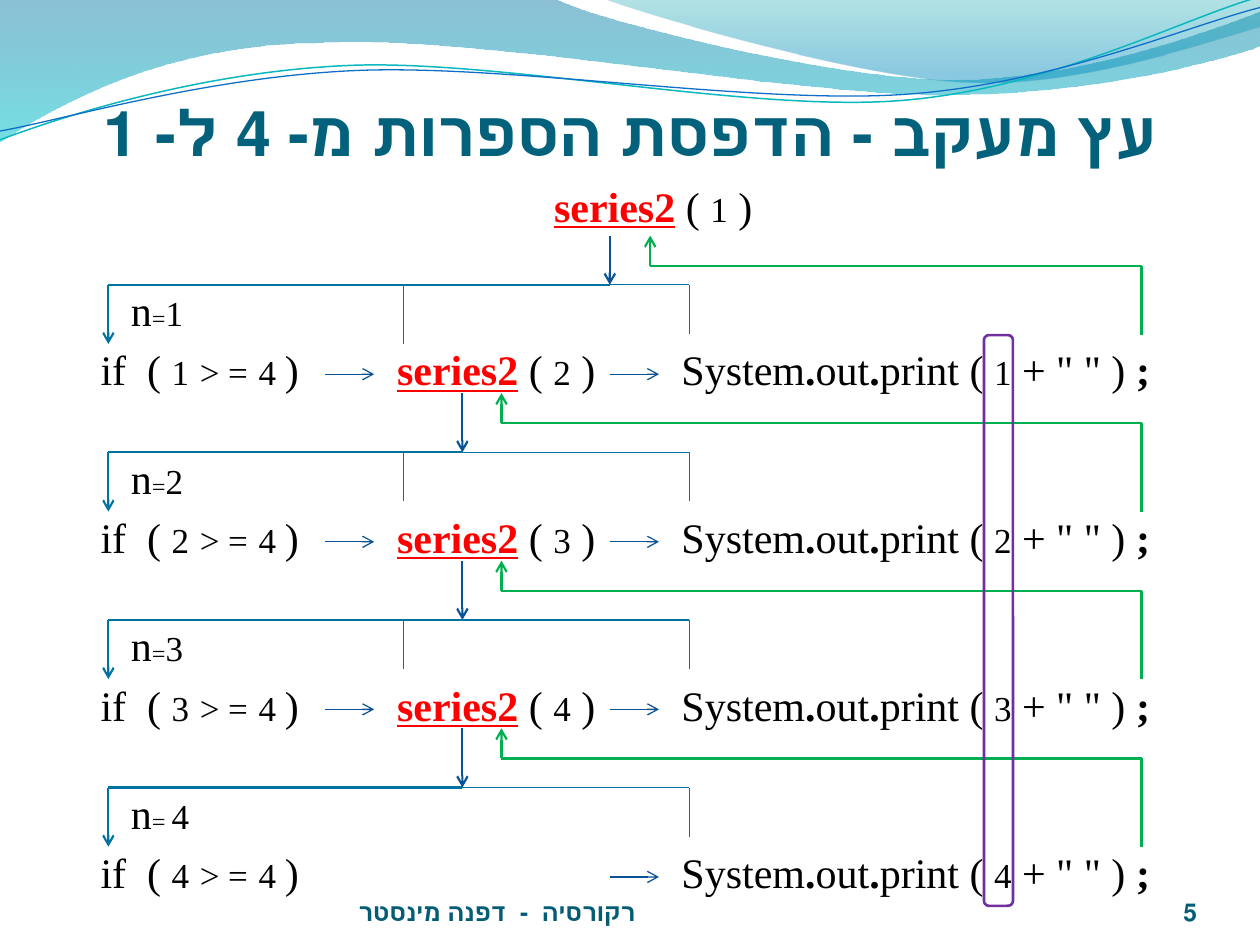
from lxml import etree
from pptx import Presentation
from pptx.dml.color import RGBColor
from pptx.enum.shapes import MSO_CONNECTOR, MSO_SHAPE
from pptx.enum.text import MSO_ANCHOR, PP_ALIGN
from pptx.oxml.ns import qn
from pptx.util import Inches, Pt

STRAIGHT = MSO_CONNECTOR.STRAIGHT
ROUNDED = MSO_SHAPE.ROUNDED_RECTANGLE
TOP, MIDDLE, BOTTOM = MSO_ANCHOR.TOP, MSO_ANCHOR.MIDDLE, MSO_ANCHOR.BOTTOM
LEFT, CENTER, RIGHT = PP_ALIGN.LEFT, PP_ALIGN.CENTER, PP_ALIGN.RIGHT

BLACK, RED = "000000", "FF0000"
BRANCH, CALL, RETURN = "0074A1", "095295", "00B050"
CODE_FONT = "Times New Roman"
LAST = 4
FIRST_BRANCH, ROW_PITCH = 2.26, 1.33
LEFT_X, CALL_X, PRINT_X, RETURN_X = 0.86, 3.2, 5.47, 9.06

# Wave outlines: a start point, then cubic curves (6 numbers) or lines (2)
WAVES = [
    ([(0, -0.01), (4.4, -0.01), (4.76, 0.17, 6.64, 0.63, 7.58, 0.63),
      (8.53, 0.63, 9.58, 0.26, 10, 0.09), (10.01, 0.36),
      (9.83, 0.44, 8.7, 0.76, 7.46, 0.75), (6.22, 0.75, 3.82, 0.28, 2.57, 0.34),
      (1.29, 0.35, 0.46, 0.83, -0.01, 1.13)],
     [(0, "0074A1", 45), (1, "00C6CF", 55)]),
    ([(4.79, -0.01), (5.09, 0.11, 6.82, 0.62, 7.69, 0.65),
      (8.56, 0.69, 9.61, 0.32, 10, 0.21), (10, 0)],
     [(0, "00A1A9", 30), (0.8, "008BBF", 45)]),
]
WAVE_LINES = [
    ([(0, 1.11), (0.48, 0.93, 1.58, 0.57, 2.77, 0.52),
      (3.95, 0.47, 5.93, 0.89, 7.13, 0.8), (8.33, 0.71, 9.38, 0.15, 9.98, -0.02)],
     "0AB8BF", 0.85),
    ([(0, 1.04), (0.47, 0.96, 1.64, 0.61, 2.83, 0.56),
      (4.03, 0.51, 5.97, 0.83, 7.17, 0.75), (8.36, 0.67, 9.41, 0.21, 10, 0.06)],
     "0F6FC6", 0.75),
]


def rgb(color):
    return RGBColor.from_string(color)


def add_outline(slide, outline, close):
    points = [(Inches(segment[i]), Inches(segment[i + 1]))
              for segment in outline for i in range(0, len(segment), 2)]
    builder = slide.shapes.build_freeform(*points[0], scale=1.0)
    builder.add_line_segments(points[1:], close=close)
    shape = builder.convert_to_shape()
    shape.shadow.inherit = False
    # Join each run of three points into one cubic curve
    lines = iter(list(shape._element.spPr.iter(qn("a:lnTo"))))
    for segment in outline[1:]:
        line = next(lines)
        if len(segment) == 6:
            curve = etree.Element(qn("a:cubicBezTo"))
            line.addprevious(curve)
            for control in (line, next(lines), next(lines)):
                curve.append(control[0])
                control.getparent().remove(control)
    return shape


def add_wave(slide, outline, stops):
    shape = add_outline(slide, outline, True)
    shape.line.fill.background()
    shape.fill.gradient()
    shape.fill.gradient_angle = 270
    for stop, (position, color, _) in zip(shape.fill.gradient_stops, stops):
        stop.position = position
        stop.color.rgb = rgb(color)
    colors = shape._element.spPr.iter(qn("a:srgbClr"))
    for element, (_, _, opacity) in zip(colors, stops):
        etree.SubElement(element, qn("a:alpha"), val=str(opacity * 1000))


def add_wave_line(slide, outline, color, width):
    shape = add_outline(slide, outline, False)
    shape.fill.background()
    shape.line.color.rgb = rgb(color)
    shape.line.width = Pt(width)


def add_line(slide, start, end, color, width, arrow=False):
    line = slide.shapes.add_connector(STRAIGHT, *map(Inches, start + end))
    line.line.color.rgb = rgb(color)
    line.line.width = Pt(width)
    if arrow:
        etree.SubElement(line.line._get_or_add_ln(), qn("a:tailEnd"), type="arrow")
    etree.SubElement(line._element.spPr, qn("a:effectLst"))


def part(text, size=24, color=BLACK, bold=False, underline=False, baseline=0):
    return text, size, color, bold, underline, baseline


def add_text(slide, box, parts, font=CODE_FONT, anchor=MIDDLE, align=LEFT,
             insets=(0.1, 0.05, 0.1, 0.05), rtl=False):
    frame = slide.shapes.add_textbox(*map(Inches, box)).text_frame
    frame.word_wrap = True
    frame.vertical_anchor = anchor
    (frame.margin_left, frame.margin_top,
     frame.margin_right, frame.margin_bottom) = map(Inches, insets)
    paragraph = frame.paragraphs[0]
    paragraph.alignment = align
    if rtl:
        paragraph._p.get_or_add_pPr().set("rtl", "1")
    for text, size, color, bold, underline, baseline in parts:
        run = paragraph.add_run()
        run.text = text
        run.font.size = Pt(size)
        run.font.name = font
        run.font.bold = bold
        run.font.underline = underline
        run.font.color.rgb = rgb(color)
        if baseline:
            run._r.get_or_add_rPr().set("baseline", str(baseline * 1000))


def call_parts(number):
    return [part("series2", color=RED, bold=True, underline=True),
            part(" ( "), part(str(number), 20), part(" )")]


def add_row_texts(slide, number, branch):
    text_top = branch + 0.32
    equals = "= " if number == LAST else "="
    add_text(slide, (0.94, branch - 0.15, 0.78, 0.7),
             [part("n"), part(equals, baseline=-2), part(str(number), 20)])
    add_text(slide, (0.7, text_top, 2.11, 0.7),
             [part("if  ( "), part(str(number), 20), part(" "), part("> =", 20),
              part(" "), part("4 ", 20), part(")")])
    if number < LAST:
        add_text(slide, (2.97, text_top, 1.95, 0.7),
                 [part(" ", color=RED)] + call_parts(number + 1))
    add_text(slide, (5.31, text_top, 4.22, 0.7),
             [part("System"), part(".", bold=True), part("out"), part(".", bold=True),
              part("print ( "), part(str(number), 20), part(' + " " ) '),
              part(";", bold=True)])


def add_row_lines(slide, number, branch):
    first = number == 1
    trunk_x, return_x = (4.84, 5.16) if first else (3.67, 3.98)
    call_y = branch - (0.39 if first else 0.47)
    return_y = call_y + 0.24
    # Call down into this level and its branches
    add_line(slide, (trunk_x, call_y), (trunk_x, branch), CALL, 1.25, True)
    add_line(slide, (trunk_x, branch), (LEFT_X, branch), BRANCH, 1.25)
    add_line(slide, (LEFT_X, branch), (LEFT_X, branch + 0.47), BRANCH, 1.25, True)
    add_line(slide, (PRINT_X, branch), (trunk_x, branch), BRANCH, 0.75)
    add_line(slide, (PRINT_X, branch), (PRINT_X, branch + 0.39), BRANCH, 0.75)
    if number < LAST:
        stub = 0.47 if first else 0.39
        add_line(slide, (CALL_X, branch), (CALL_X, branch + stub), BRANCH, 0.75)
    # Order of the steps inside the level
    for x in (2.58, 4.84) if number < LAST else (4.84,):
        add_line(slide, (x, branch + 0.71), (x + 0.39, branch + 0.71), CALL, 0.75, True)
    # Return to the caller
    return_start = branch + (0.4 if first else 0.47)
    add_line(slide, (RETURN_X, return_start), (RETURN_X, return_y), RETURN, 1.25)
    add_line(slide, (return_x, return_y), (RETURN_X, return_y), RETURN, 1.25)
    add_line(slide, (return_x, return_y), (return_x, call_y), RETURN, 1.25, True)


def add_output_frame(slide):
    shape = slide.shapes.add_shape(ROUNDED, *map(Inches, (7.81, 2.66, 0.23, 4.53)))
    shape.shadow.inherit = False
    shape.fill.background()
    shape.line.color.rgb = rgb("7030A0")
    shape.line.width = Pt(1.5)


def main():
    presentation = Presentation()
    presentation.slide_width, presentation.slide_height = Inches(10), Inches(7.5)
    slide = presentation.slides.add_slide(presentation.slide_layouts[6])

    # Wave decoration
    for wave in WAVES:
        add_wave(slide, *wave)
    for wave_line in WAVE_LINES:
        add_wave_line(slide, *wave_line)

    # Title and footer
    add_text(slide, (0.5, 0.39, 9, 0.95),
             [part("עץ מעקב - הדפסת הספרות מ- 4 ל- 1", 36, "04617B", True)],
             "Calibri", BOTTOM, CENTER, (0, 0.05, 0, 0), True)
    for box, text, align in (((2.11, 6.95, 3.67, 0.4), "רקורסיה  -  דפנה מינסטר", CENTER),
                             ((8.67, 6.95, 0.83, 0.4), "5", RIGHT)):
        add_text(slide, box, [part(text, 14, "045D75", True)],
                 "Cambria", BOTTOM, align, (0, 0, 0, 0), True)

    # Trace tree
    add_text(slide, (4.3, 1.43, 1.8, 0.7), call_parts(1), anchor=TOP,
             insets=(0.1, 0, 0.1, 0))
    for number in range(1, LAST + 1):
        branch = FIRST_BRANCH + (number - 1) * ROW_PITCH
        add_row_texts(slide, number, branch)
        add_row_lines(slide, number, branch)
    add_output_frame(slide)

    presentation.save("out.pptx")


if __name__ == "__main__":
    main()
